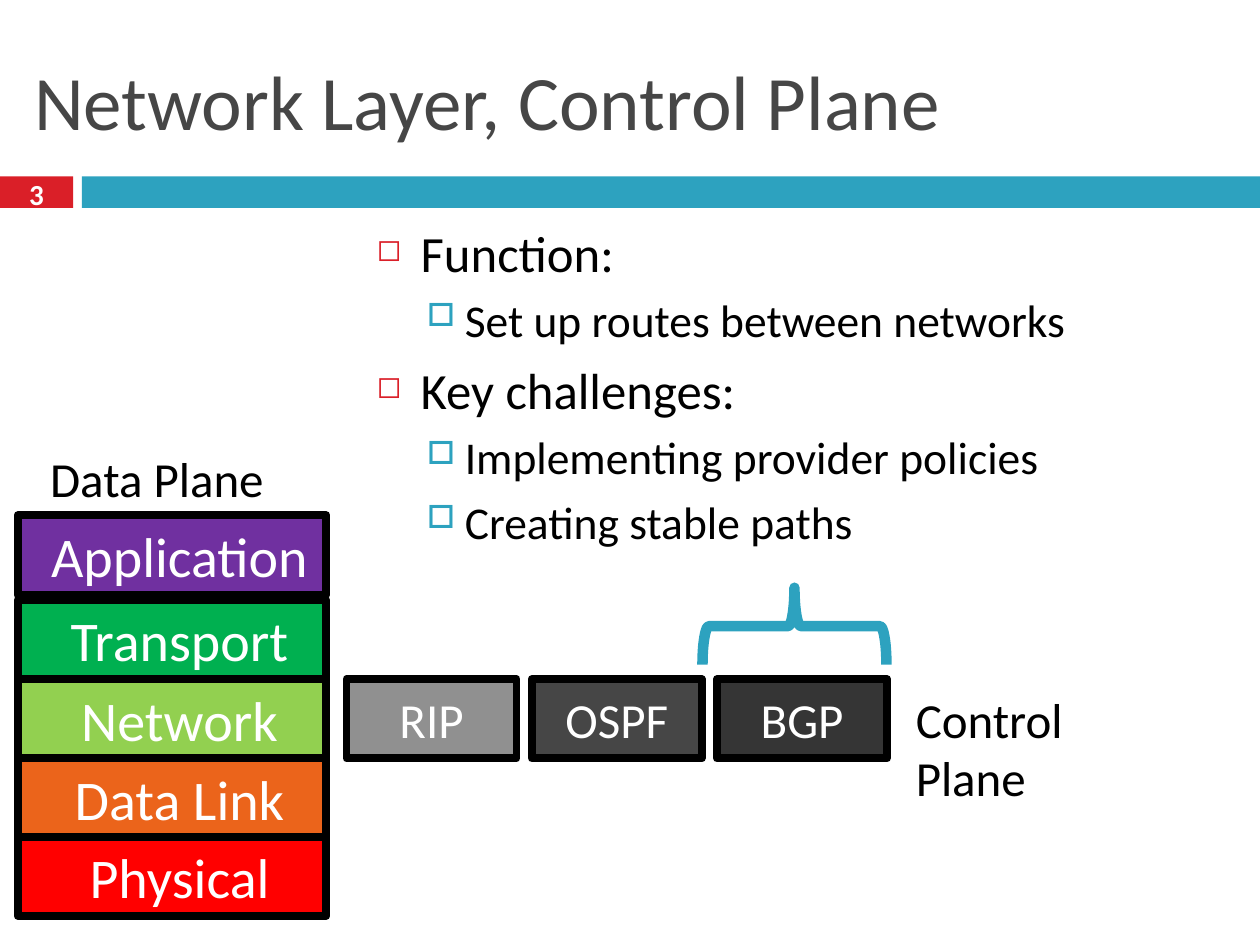
"""Build the slide on the control plane of the network layer."""
from dataclasses import dataclass

from lxml import etree
from pptx import Presentation
from pptx import util as u
from pptx.dml import color
from pptx.enum import shapes, text
from pptx.oxml import ns


@dataclass(frozen=True)
class Theme:
    """Colours, type sizes and font of the slide."""
    font: str = "Calibri"
    red: str = "DA1F28"
    teal: str = "2DA2BF"
    grey: str = "464646"
    black: str = "000000"
    white: str = "FFFFFF"
    title: float = 44
    layer: float = 32
    point: float = 29
    label: float = 28
    subpoint: float = 26
    number: float = 16.6


THEME = Theme()
LEVELS = (
    dict(size=THEME.point, before=7, margin=0.35, indent=-0.35,
         mark="◻", mark_color=THEME.red, mark_size=60),
    dict(size=THEME.subpoint, before=5.5, margin=0.7, indent=-0.3,
         mark="□", mark_color=THEME.teal, mark_size=70),
)
POINTS = (
    (0, "Function:"),
    (1, "Set up routes between networks"),
    (0, "Key challenges:"),
    (1, "Implementing provider policies"),
    (1, "Creating stable paths"),
)
LAYERS = (
    ("Application", "7030A0", 4.09),
    ("Transport", "00B050", 4.76),
    ("Network", "92D050", 5.39),
    ("Data Link", "EB641B", 6.02),
    ("Physical", "FF0000", 6.64),
)
PROTOCOLS = (("RIP", "909090"), ("OSPF", THEME.grey), ("BGP", "353535"))
ROW_TOP, ROW_HEIGHT = 5.39, 0.63


def apply(target, values):
    """Set each named attribute of the target."""
    for name, value in values.items():
        setattr(target, name, value)


def box(*lengths):
    """Return the lengths given in inches."""
    return [u.Inches(length) for length in lengths]


def rgb(code):
    """Return the colour of a hex code."""
    return color.RGBColor.from_string(code)


def write(paragraph, words, size, ink, align=text.PP_ALIGN.LEFT, bold=False):
    """Put formatted words in a paragraph."""
    paragraph.alignment = align
    run = paragraph.add_run()
    run.text = words
    apply(run.font, dict(name=THEME.font, size=u.Pt(size), bold=bold))
    run.font.color.rgb = rgb(ink)


def indent(paragraph, margin, first=0):
    """Set the left margin and first-line indent of a paragraph."""
    properties = paragraph._p.get_or_add_pPr()
    properties.set("marL", str(u.Inches(margin)))
    properties.set("indent", str(u.Inches(first)))
    return properties


def add_bullet(properties, mark, mark_color, mark_size):
    """Give paragraph properties a coloured bullet."""
    ink = etree.SubElement(properties, ns.qn("a:buClr"))
    etree.SubElement(ink, ns.qn("a:srgbClr"), val=mark_color)
    etree.SubElement(properties, ns.qn("a:buSzPct"), val=str(mark_size * 1000))
    etree.SubElement(properties, ns.qn("a:buChar"), char=mark)


def add_shape(slide, kind, place, fill=None, line=None, width=0):
    """Add a preset shape with a plain fill and outline."""
    shape = slide.shapes.add_shape(kind, *box(*place))
    shape.shadow.inherit = False
    for part, code in ((shape.fill, fill), (shape.line.fill, line)):
        if code:
            part.solid()
            part.fore_color.rgb = rgb(code)
        else:
            part.background()
    if line:
        shape.line.width = u.Pt(width)
    return shape


def add_block(slide, place, fill, words, size, anchor):
    """Add a black-edged block with centred words and return its paragraph."""
    block = add_shape(slide, shapes.MSO_SHAPE.RECTANGLE, place, fill, THEME.black, 4.5)
    apply(block.text_frame, dict(word_wrap=True, vertical_anchor=anchor))
    paragraph = block.text_frame.paragraphs[0]
    write(paragraph, words, size, THEME.white, text.PP_ALIGN.CENTER)
    return paragraph


def add_text(slide, place, anchor=text.MSO_ANCHOR.TOP):
    """Add a wrapping text box and return its frame."""
    frame = slide.shapes.add_textbox(*box(*place)).text_frame
    apply(frame, dict(word_wrap=True, vertical_anchor=anchor))
    return frame


def add_header(slide):
    """Format the title and add the numbered band below it."""
    for left, width, fill in ((0, 0.58, THEME.red), (0.65, 9.35, THEME.teal)):
        add_shape(slide, shapes.MSO_SHAPE.RECTANGLE, (left, 1.4, width, 0.25), fill)
    title = slide.shapes.title
    apply(title, dict(zip(("left", "top", "width", "height"), box(0.17, 0.25, 9.67, 1.08))))
    title.text_frame.vertical_anchor = text.MSO_ANCHOR.MIDDLE
    write(title.text_frame.paragraphs[0], "Network Layer, Control Plane", THEME.title, THEME.grey)
    number = add_text(slide, (0, 1.37, 0.58, 0.33), text.MSO_ANCHOR.MIDDLE)
    write(number.paragraphs[0], "3", THEME.number, THEME.white, text.PP_ALIGN.CENTER, True)


def add_points(slide):
    """Add the two-level list of function and challenges."""
    frame = add_text(slide, (2.89, 1.71, 6.95, 2.96))
    for index, (level, words) in enumerate(POINTS):
        paragraph = frame.add_paragraph() if index else frame.paragraphs[0]
        style = LEVELS[level]
        apply(paragraph, dict(level=level, space_before=u.Pt(style["before"])))
        write(paragraph, words, style["size"], THEME.black)
        properties = indent(paragraph, style["margin"], style["indent"])
        add_bullet(properties, style["mark"], style["mark_color"], style["mark_size"])


def add_data_plane(slide):
    """Add the stack of layers."""
    for name, fill, top in LAYERS:
        paragraph = add_block(slide, (0.14, top, 2.45, ROW_HEIGHT), fill, name,
                              THEME.layer, text.MSO_ANCHOR.TOP)
        paragraph.space_before = u.Pt(0.2 * THEME.layer)
        indent(paragraph, 0.12)


def add_control_plane(slide):
    """Add the row of routing protocols and the brace over the last."""
    brace = add_shape(slide, shapes.MSO_SHAPE.LEFT_BRACE, (6, 4.24, 0.61, 1.46),
                      line=THEME.teal, width=6)
    brace.rotation = 90
    for column, (name, fill) in enumerate(PROTOCOLS):
        add_block(slide, (2.75 + 1.47 * column, ROW_TOP, 1.35, ROW_HEIGHT), fill, name,
                  THEME.label, text.MSO_ANCHOR.MIDDLE)


def add_plane_labels(slide):
    """Name the two planes."""
    for words, place in (("Control Plane", (7.17, 5.42, 2.2, 0.57)),
                         ("Data Plane", (0.3, 3.51, 2.15, 0.57))):
        write(add_text(slide, place).paragraphs[0], words, THEME.label, THEME.black)


def main():
    """Build and save the slide."""
    deck = Presentation()
    apply(deck, dict(slide_width=u.Inches(10), slide_height=u.Inches(7.5)))
    slide = deck.slides.add_slide(deck.slide_layouts[5])
    for add_part in (add_header, add_points, add_data_plane, add_control_plane, add_plane_labels):
        add_part(slide)
    deck.save("out.pptx")


if __name__ == "__main__":
    main()
